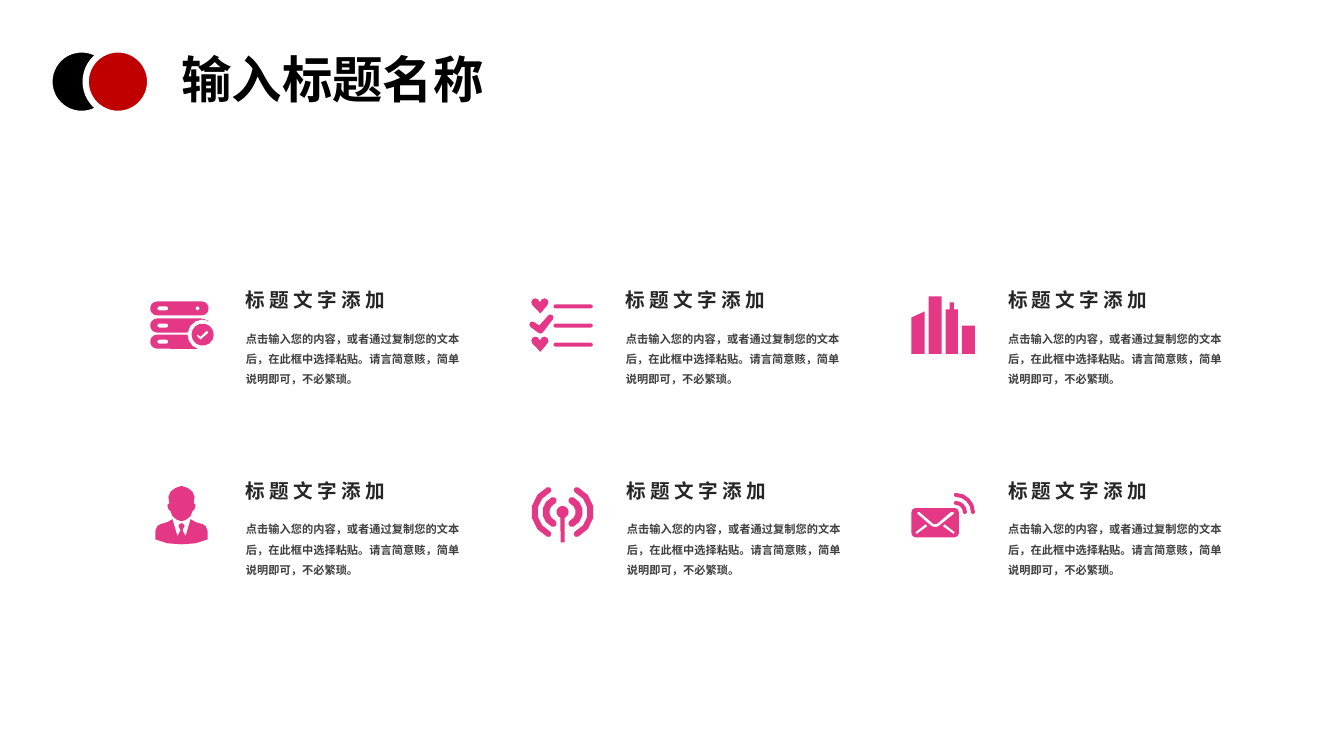
import math

import pptx
import pptx.dml.color
import pptx.enum.shapes
import pptx.enum.text
import pptx.oxml.ns
import pptx.util
from pptx.util import Inches

RGBColor = pptx.dml.color.RGBColor
PINK = RGBColor(0xE4, 0x38, 0x86)
RED = RGBColor(0xC0, 0x00, 0x00)
BLACK = RGBColor(0x00, 0x00, 0x00)
WHITE = RGBColor(0xFF, 0xFF, 0xFF)
HEADING_GRAY = RGBColor(0x26, 0x26, 0x26)
BODY_GRAY = RGBColor(0x40, 0x40, 0x40)
FONT = "Noto Sans CJK JP"
HEADING = "标题文字添加"
BODY = "点击输入您的内容，或者通过复制您的文本后，在此框中选择粘贴。请言简意赅，简单说明即可，不必繁琐。"


def add_text(shapes, text, left, top, width, height, size, color, tracking=0, line_spacing=None):
    box = shapes.add_textbox(Inches(left), Inches(top), Inches(width), Inches(height))
    box.text_frame.word_wrap = True
    box.text_frame.auto_size = pptx.enum.text.MSO_AUTO_SIZE.SHAPE_TO_FIT_TEXT
    paragraph = box.text_frame.paragraphs[0]
    paragraph.line_spacing = line_spacing
    run = paragraph.add_run()
    run.text = text
    run.font.size = pptx.util.Pt(size)
    run.font.bold = True
    run.font.name = FONT
    run.font.color.rgb = color
    properties = run.font._element
    east_asian = properties.makeelement(pptx.oxml.ns.qn("a:ea"), {"typeface": FONT})
    properties.find(pptx.oxml.ns.qn("a:latin")).addnext(east_asian)
    if tracking:
        properties.set("spc", str(tracking * 100))


def outline(*parts):
    """Join points (x, y) and arcs (x, y, radius, start degrees, end degrees)."""
    points = []
    for part in parts:
        if len(part) == 2:
            points.append(part)
            continue
        x, y, radius, start, end = part
        steps = max(2, round(abs(end - start) / (25 if radius > 0.05 else 45)))
        for step in range(steps + 1):
            angle = math.radians(start + (end - start) * step / steps)
            points.append((x + radius * math.cos(angle), y + radius * math.sin(angle)))
    return points


# Server: three bars, the lower two cut away around a check badge
server = [
    outline((1.56, 3.06, 0.07, 90, 270), (2, 3.06, 0.07, -90, 90)),
    outline((1.56, 3.23, 0.07, 90, 270), (2, 3.23, 0.07, -90, -35), (2.01, 3.32, 0.15, -65, -172)),
    outline((1.56, 3.39, 0.07, 90, 270), (2.01, 3.32, 0.15, 180, 110)),
    outline((1.96, 3.06, 0.02, 0, 360)),
    outline((2.01, 3.32, 0.11, 0, 360)),
    [(2.05, 3.28), (2.07, 3.3), (1.99, 3.37), (1.95, 3.33), (1.96, 3.32), (1.99, 3.34)],
]
for y in (3.06, 3.23, 3.39):
    server.append(outline((1.58, y, 0.02, 90, 270), (1.65, y, 0.02, -90, 90)))

# Checklist: a check mark, two hearts and three lines
checklist = [outline((5.28, 3.22, 0.03, 130, 310), (5.35, 3.23), (5.46, 3.15, 0.03, 220, 400),
                     (5.36, 3.28, 0.03, 40, 130))]
for y in (3.04, 3.23, 3.42):
    checklist.append(outline((5.51, y, 0.02, 90, 270), (5.86, y, 0.02, -90, 90)))
for y in (3, 3.38):
    checklist.append(outline((5.31, y, 0.04, 140, 350), (5.4, y, 0.04, 190, 400), (5.36, y + 0.11)))

city = [
    [(9.04, 3.15), (9.17, 3.09), (9.17, 3.51), (9.04, 3.51)],
    [(9.21, 2.94), (9.34, 2.94), (9.34, 3.51), (9.21, 3.51)],
    [(9.42, 3), (9.46, 3), (9.46, 3.07), (9.5, 3.07), (9.5, 3.51), (9.38, 3.51), (9.38, 3.07),
     (9.42, 3.07)],
    [(9.54, 3.23), (9.67, 3.23), (9.67, 3.51), (9.54, 3.51)],
]

# Person: left halves of the suit and the head, mirrored about x = 1.8
suit = [(1.8, 5.4), (1.66, 5.39), (1.54, 5.35), (1.54, 5.27), (1.56, 5.22), (1.59, 5.2),
        (1.66, 5.18), (1.71, 5.15), (1.76, 5.32), (1.79, 5.26), (1.77, 5.22), (1.78, 5.2), (1.8, 5.19)]
head = [(1.8, 5.17), (1.76, 5.16), (1.71, 5.12), (1.69, 5.07), (1.67, 5.05), (1.66, 5.01),
        (1.68, 4.99), (1.67, 4.93), (1.69, 4.88), (1.74, 4.84), (1.8, 4.82)]
person = [half + [(3.6 - x, y) for x, y in reversed(half)] for half in (suit, head)]

antenna = [outline((5.58, 5.08, 0.06, 110, 430), (5.6, 5.38), (5.56, 5.38))]
mail = [
    outline((9.08, 5.08, 0.04, 180, 270), (9.47, 5.08, 0.04, 270, 360),
            (9.47, 5.29, 0.04, 0, 90), (9.08, 5.29, 0.04, 90, 180)),
    [(9.1, 5.08), (9.12, 5.08), (9.26, 5.2), (9.29, 5.2), (9.43, 5.08), (9.46, 5.08), (9.46, 5.1),
     (9.31, 5.22), (9.28, 5.23), (9.24, 5.22), (9.1, 5.1)],
    [(9.18, 5.2), (9.08, 5.28), (9.09, 5.3), (9.2, 5.22)],
    [(9.37, 5.2), (9.35, 5.22), (9.46, 5.3), (9.47, 5.28)],
]

# Radio waves: bands with round ends, as centre, outer and inner radius, angles
waves = [
    (antenna, 5.62, 5.08, 0.27, 0.21, -65, 65),
    (antenna, 5.62, 5.08, 0.16, 0.09, -65, 65),
    (antenna, 5.54, 5.08, 0.27, 0.21, 115, 245),
    (antenna, 5.54, 5.08, 0.16, 0.09, 115, 245),
    (mail, 9.48, 5.08, 0.19, 0.15, -90, 0),
    (mail, 9.48, 5.08, 0.11, 0.07, -90, 0),
]
for icon, x, y, outer, inner, start, end in waves:
    middle, cap = (outer + inner) / 2, (outer - inner) / 2
    first, last = math.radians(start), math.radians(end)
    icon.append(outline(
        (x, y, outer, start, end),
        (x + middle * math.cos(last), y + middle * math.sin(last), cap, end, end + 180),
        (x, y, inner, end, start),
        (x + middle * math.cos(first), y + middle * math.sin(first), cap, start + 180, start + 360)))

presentation = pptx.Presentation()
presentation.slide_width = Inches(13.33)
presentation.slide_height = Inches(7.5)
slide = presentation.slides.add_slide(presentation.slide_layouts[6])

# Six items: icon, body text and heading
items = [(server, 2.34, 2.81), (checklist, 6.11, 2.81), (city, 9.9, 2.81),
         (person, 2.34, 4.7), (antenna, 6.12, 4.7), (mail, 9.9, 4.7)]
for icon, left, top in items:
    group = slide.shapes.add_group_shape()
    contours = [[(Inches(x), Inches(y)) for x, y in contour] for contour in icon]
    builder = group.shapes.build_freeform(*contours[0][0])
    for index, contour in enumerate(contours):
        if index:
            builder.move_to(*contour[0])
        builder.add_line_segments(contour[1:], close=True)
    shape = builder.convert_to_shape()
    shape.shadow.inherit = False
    shape.fill.solid()
    shape.fill.fore_color.rgb = PINK
    shape.line.fill.background()
    add_text(group.shapes, BODY, left, top + 0.37, 2.39, 0.71, size=8, color=BODY_GRAY,
             line_spacing=1.5)
    add_text(group.shapes, HEADING, left, top, 1.75, 0.34, size=14, color=HEADING_GRAY, tracking=3)

# Slide title with two overlapping discs
title_group = slide.shapes.add_group_shape()
for left, color in ((0.49, BLACK), (0.85, RED)):
    disc = title_group.shapes.add_shape(pptx.enum.shapes.MSO_SHAPE.OVAL, Inches(left), Inches(0.49),
                                        Inches(0.64), Inches(0.64))
    disc.shadow.inherit = False
    disc.fill.solid()
    disc.fill.fore_color.rgb = color
    disc.line.color.rgb = WHITE
    disc.line.width = pptx.util.Pt(4.5)
add_text(title_group.shapes, "输入标题名称", 1.7, 0.43, 3.54, 0.71, size=36, color=BLACK)

presentation.save("out.pptx")
